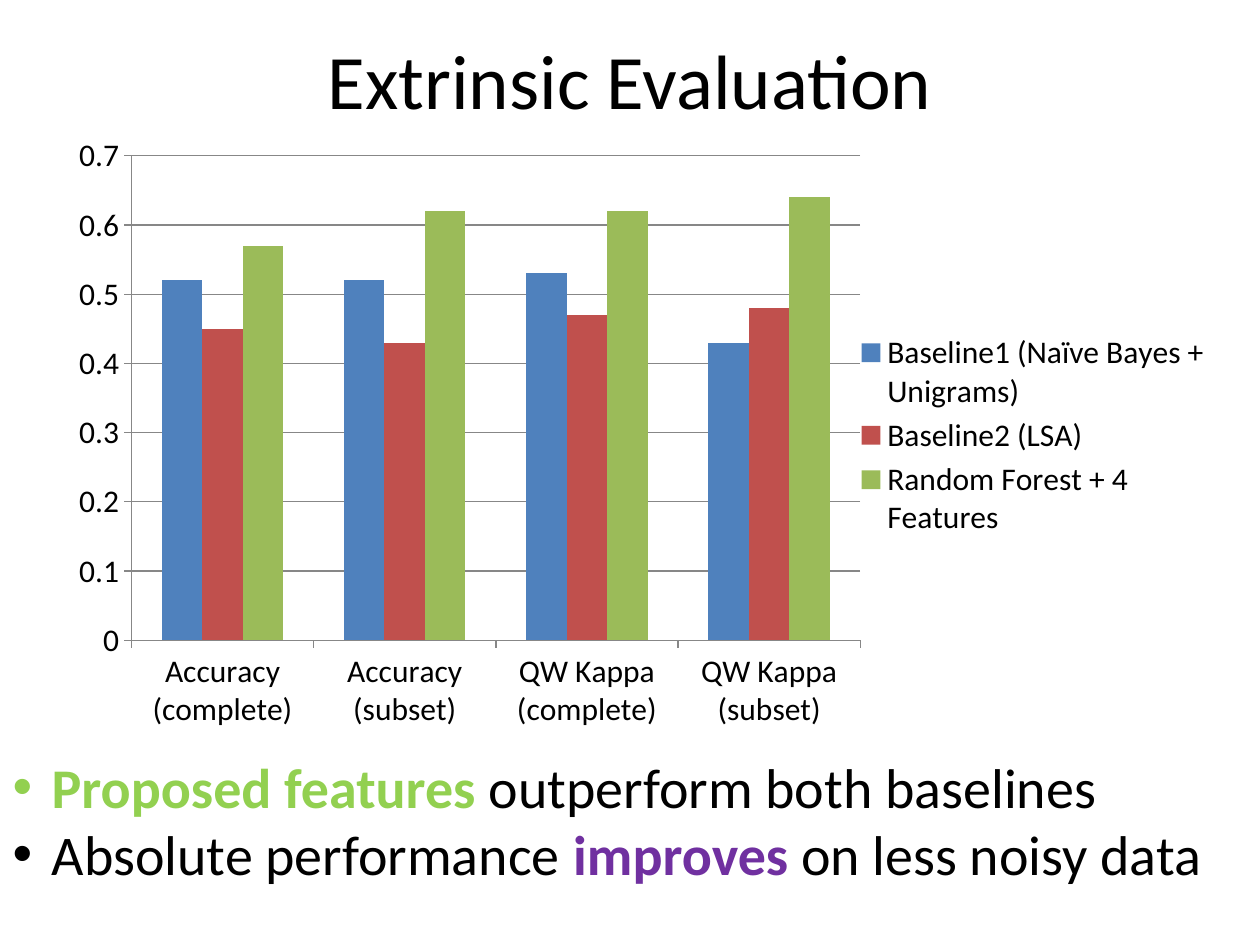
from lxml import etree
from pptx import Presentation
from pptx.chart.data import CategoryChartData as ChartData
from pptx.dml.color import RGBColor
from pptx.enum.chart import XL_CHART_TYPE as Kind, XL_LEGEND_POSITION as Side
from pptx.enum.chart import XL_TICK_MARK as Tick
from pptx.enum.text import MSO_ANCHOR as Anchor, MSO_AUTO_SIZE as Fit, PP_ALIGN as Align
from pptx.oxml.ns import qn
from pptx.util import Inches, Pt

FONT = "Calibri"
BLACK, GRAY = "000000", "878787"
CATS = ["Accuracy (complete)", "Accuracy (subset)",
        "QW Kappa (complete)", "QW Kappa (subset)"]
SERIES = [
    ("Baseline1 (Naïve Bayes + Unigrams)", "4F81BD", (0.52, 0.52, 0.53, 0.43)),
    ("Baseline2 (LSA)", "C0504D", (0.45, 0.43, 0.47, 0.48)),
    ("Random Forest + 4 Features", "9BBB59", (0.57, 0.62, 0.62, 0.64)),
]
POINTS = [
    [("Proposed features ", "92D050"), ("outperform both baselines", BLACK)],
    [("Absolute performance ", BLACK), ("improves", "7030A0"),
     (" on less noisy data", BLACK)],
]


def paint(part, color):
    part.rgb = RGBColor.from_string(color)


def style(font, size, color=BLACK, bold=False):
    font.name, font.size, font.bold = FONT, Pt(size), bold
    paint(font.color, color)


def place(shape, box):
    shape.left, shape.top, shape.width, shape.height = map(Inches, box)


def add_title(slide, box):
    title = slide.shapes.title
    place(title, box)
    frame = title.text_frame
    frame.text = "Extrinsic Evaluation"
    frame.vertical_anchor = Anchor.MIDDLE
    para = frame.paragraphs[0]
    para.alignment = Align.CENTER
    style(para.runs[0].font, 44)


def set_plot(chart, box):
    """Fix the inner plot area at shares of the chart's size."""
    area = chart._chartSpace.chart.plotArea
    for old in area.findall(qn("c:layout")):
        area.remove(old)
    layout = etree.Element(qn("c:layout"))
    manual = etree.SubElement(layout, qn("c:manualLayout"))
    pairs = [("layoutTarget", "inner"), ("xMode", "edge"), ("yMode", "edge")]
    for tag, val in pairs + list(zip("xywh", box)):
        etree.SubElement(manual, qn(f"c:{tag}")).set("val", str(val))
    area.insert(0, layout)


def add_bars(slide, box):
    data = ChartData()
    data.categories = CATS
    for name, _, vals in SERIES:
        data.add_series(name, vals)
    chart = slide.shapes.add_chart(
        Kind.COLUMN_CLUSTERED, *map(Inches, box), data).chart
    style(chart.font, 18)
    chart.has_title = False
    chart.has_legend = True
    chart.legend.position = Side.RIGHT
    chart.legend.include_in_layout = False

    plot = chart.plots[0]
    plot.gap_width, plot.overlap, plot.vary_by_categories = 150, 0, False
    for bars, (_, color, _) in zip(plot.series, SERIES):
        bars.format.fill.solid()
        paint(bars.format.fill.fore_color, color)

    scale = chart.value_axis
    scale.minimum_scale, scale.maximum_scale, scale.major_unit = 0, 0.7, 0.1
    scale.has_major_gridlines = True
    for axis in (scale, chart.category_axis):
        axis.major_tick_mark, axis.minor_tick_mark = Tick.OUTSIDE, Tick.NONE
    for part in (scale, chart.category_axis, scale.major_gridlines):
        part.format.line.width = Pt(0.75)
        paint(part.format.line.color, GRAY)
    set_plot(chart, (0.07, 0.05, 0.62, 0.78))


def add_points(slide, box):
    body = slide.placeholders[1]
    place(body, box)
    frame = body.text_frame
    frame.auto_size = Fit.NONE
    frame.vertical_anchor = Anchor.TOP
    frame.text = "\n".join("".join(t for t, _ in parts) for parts in POINTS)
    for para, parts in zip(frame.paragraphs, POINTS):
        para.text = ""
        para.space_before = Pt(0)
        props = para._p.get_or_add_pPr()
        props.set("marL", str(Inches(0.31)))
        props.set("indent", str(Inches(-0.31)))
        for text, color in parts:
            run = para.add_run()
            run.text = text
            style(run.font, 32, color, color != BLACK)


def main():
    deck = Presentation()
    deck.slide_width, deck.slide_height = Inches(10), Inches(7.5)
    slide = deck.slides.add_slide(deck.slide_layouts[1])
    add_title(slide, (0.5, 0, 9, 1.25))
    add_bars(slide, (0.39, 0.99, 9.33, 4.93))
    add_points(slide, (0, 5.92, 9.72, 1.72))
    deck.save("out.pptx")


if __name__ == "__main__":
    main()
